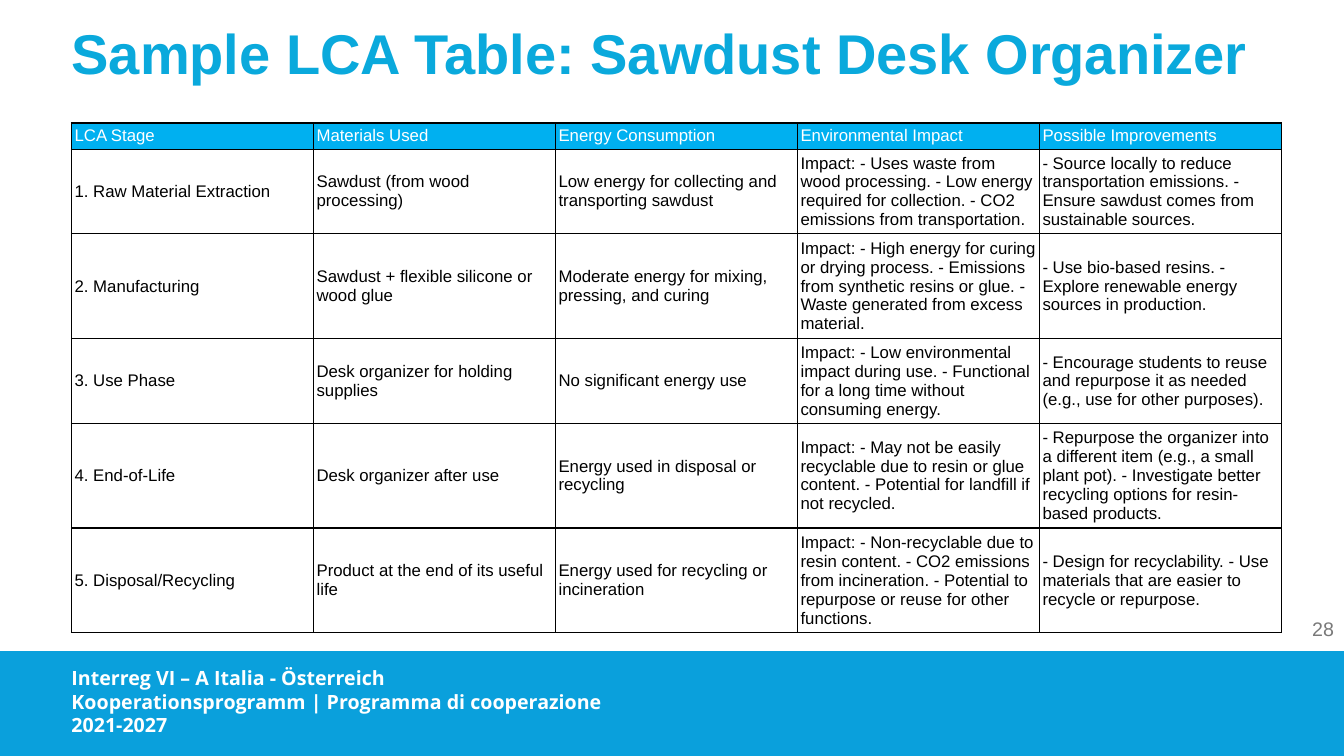
from pptx import Presentation
from pptx.dml.color import RGBColor
from pptx.enum.shapes import MSO_SHAPE
from pptx.enum.text import MSO_ANCHOR, PP_ALIGN
from pptx.oxml.ns import qn
from pptx.util import Inches, Pt
from lxml.etree import SubElement

BAND_BLUE = RGBColor(0x0A, 0xA0, 0xDC)
TITLE_BLUE = RGBColor(0x0A, 0xA9, 0xDC)
HEADER_BLUE = RGBColor(0x00, 0xB0, 0xF0)
GREY = RGBColor(0x79, 0x79, 0x79)
WHITE = RGBColor(0xFF, 0xFF, 0xFF)
BLACK = RGBColor(0x00, 0x00, 0x00)

ROW_HEIGHTS = [0.26, 0.78, 1.02, 0.78, 0.97, 0.97]
COLUMN_WIDTH = 2.4
LCA_ROWS = [
    ["LCA Stage", "Materials Used", "Energy Consumption",
     "Environmental Impact", "Possible Improvements"],
    ["1. Raw Material Extraction", "Sawdust (from wood processing)",
     "Low energy for collecting and transporting sawdust",
     "Impact: - Uses waste from wood processing. - Low energy required for "
     "collection. - CO2 emissions from transportation.",
     "- Source locally to reduce transportation emissions. - Ensure sawdust "
     "comes from sustainable sources."],
    ["2. Manufacturing", "Sawdust + flexible silicone or wood glue",
     "Moderate energy for mixing, pressing, and curing",
     "Impact: - High energy for curing or drying process. - Emissions from "
     "synthetic resins or glue. - Waste generated from excess material.",
     "- Use bio-based resins. - Explore renewable energy sources in production."],
    ["3. Use Phase", "Desk organizer for holding supplies",
     "No significant energy use",
     "Impact: - Low environmental impact during use. - Functional for a long "
     "time without consuming energy.",
     "- Encourage students to reuse and repurpose it as needed (e.g., use for "
     "other purposes)."],
    ["4. End-of-Life", "Desk organizer after use",
     "Energy used in disposal or recycling",
     "Impact: - May not be easily recyclable due to resin or glue content. - "
     "Potential for landfill if not recycled.",
     "- Repurpose the organizer into a different item (e.g., a small plant "
     "pot). - Investigate better recycling options for resin-based products."],
    ["5. Disposal/Recycling", "Product at the end of its useful life",
     "Energy used for recycling or incineration",
     "Impact: - Non-recyclable due to resin content. - CO2 emissions from "
     "incineration. - Potential to repurpose or reuse for other functions.",
     "- Design for recyclability. - Use materials that are easier to recycle "
     "or repurpose."],
]


def format_text(frame, size, color, font="Arial", bold=False):
    for paragraph in frame.paragraphs:
        for run in paragraph.runs:
            run.font.name = font
            run.font.size = Pt(size)
            run.font.bold = bold
            run.font.color.rgb = color


def add_text(slide, box, text, size, color, font="Arial", bold=False):
    frame = slide.shapes.add_textbox(*map(Inches, box)).text_frame
    frame.word_wrap = True
    frame.text = text
    format_text(frame, size, color, font, bold)
    return frame


def add_band(slide, box, color):
    band = slide.shapes.add_shape(MSO_SHAPE.RECTANGLE, *map(Inches, box))
    band.shadow.inherit = False
    band.fill.solid()
    band.fill.fore_color.rgb = color
    band.line.fill.background()


def add_borders(cell, color, width):
    properties = cell._tc.get_or_add_tcPr()
    for side in ("a:lnL", "a:lnR", "a:lnT", "a:lnB"):
        line = SubElement(properties, qn(side), w=str(Pt(width)))
        fill = SubElement(line, qn("a:solidFill"))
        SubElement(fill, qn("a:srgbClr"), val=str(color))


def fill_cell(cell, text, is_header):
    cell.text = text
    cell.vertical_anchor = MSO_ANCHOR.MIDDLE
    cell.margin_left = cell.margin_right = Inches(0.03)
    cell.margin_top = cell.margin_bottom = Inches(0.02)
    format_text(cell.text_frame, 12, WHITE if is_header else BLACK)
    add_borders(cell, BLACK, 1)
    if is_header:
        cell.fill.solid()
        cell.fill.fore_color.rgb = HEADER_BLUE
    else:
        cell.fill.background()


def add_lca_table(slide, left, top):
    columns = len(LCA_ROWS[0])
    table = slide.shapes.add_table(
        len(LCA_ROWS), columns, Inches(left), Inches(top),
        Inches(COLUMN_WIDTH * columns), Inches(sum(ROW_HEIGHTS))).table
    table.horz_banding = False
    for column in table.columns:
        column.width = Inches(COLUMN_WIDTH)
    for r, (height, texts) in enumerate(zip(ROW_HEIGHTS, LCA_ROWS)):
        table.rows[r].height = Inches(height)
        for c, text in enumerate(texts):
            fill_cell(table.cell(r, c), text, r == 0)


def main():
    deck = Presentation()
    deck.slide_width, deck.slide_height = Inches(13.33), Inches(7.5)
    slide = deck.slides.add_slide(deck.slide_layouts[6])

    # Footer band with programme name
    add_band(slide, (0, 6.46, 13.33, 1.04), BAND_BLUE)
    add_text(slide, (0.61, 6.56, 5.98, 0.81),
             "Interreg VI – A Italia - Österreich\v"
             "Kooperationsprogramm | Programma di cooperazione\n2021-2027",
             14, WHITE, "Open Sans", True)

    # Title
    title = add_text(slide, (0.71, 0.26, 12.01, 0.79),
                     "Sample LCA Table: Sawdust Desk Organizer",
                     40, TITLE_BLUE, bold=True)
    title.margin_left = title.margin_right = 0
    title.margin_top = title.margin_bottom = 0
    title.paragraphs[0].line_spacing = 0.9

    # Page number
    page_number = add_text(slide, (12.83, 6.04, 0.5, 0.4), "28", 14, GREY)
    page_number.vertical_anchor = MSO_ANCHOR.MIDDLE
    page_number.paragraphs[0].alignment = PP_ALIGN.RIGHT

    # Life cycle table
    add_lca_table(slide, 0.71, 1.22)

    deck.save("out.pptx")


if __name__ == "__main__":
    main()
